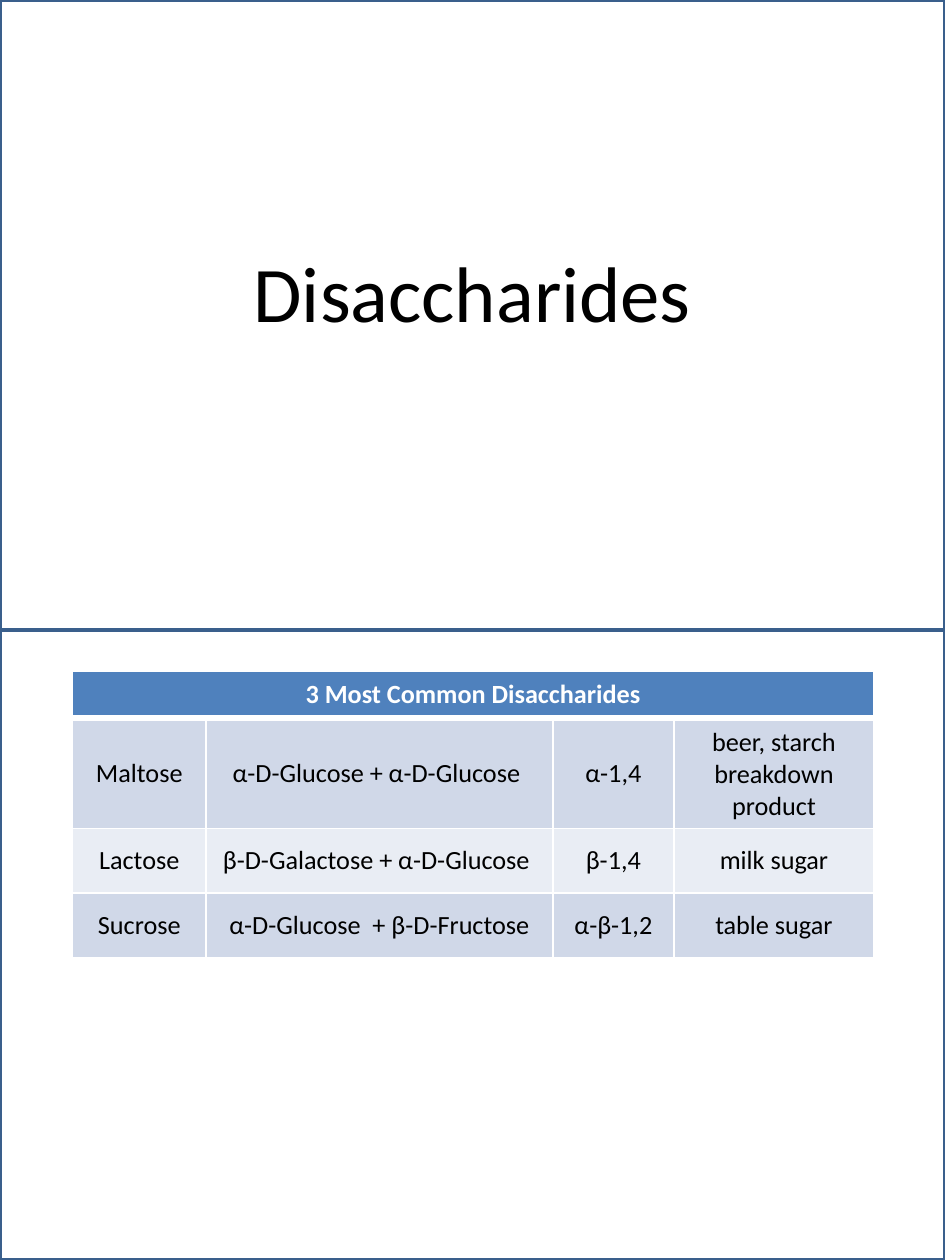
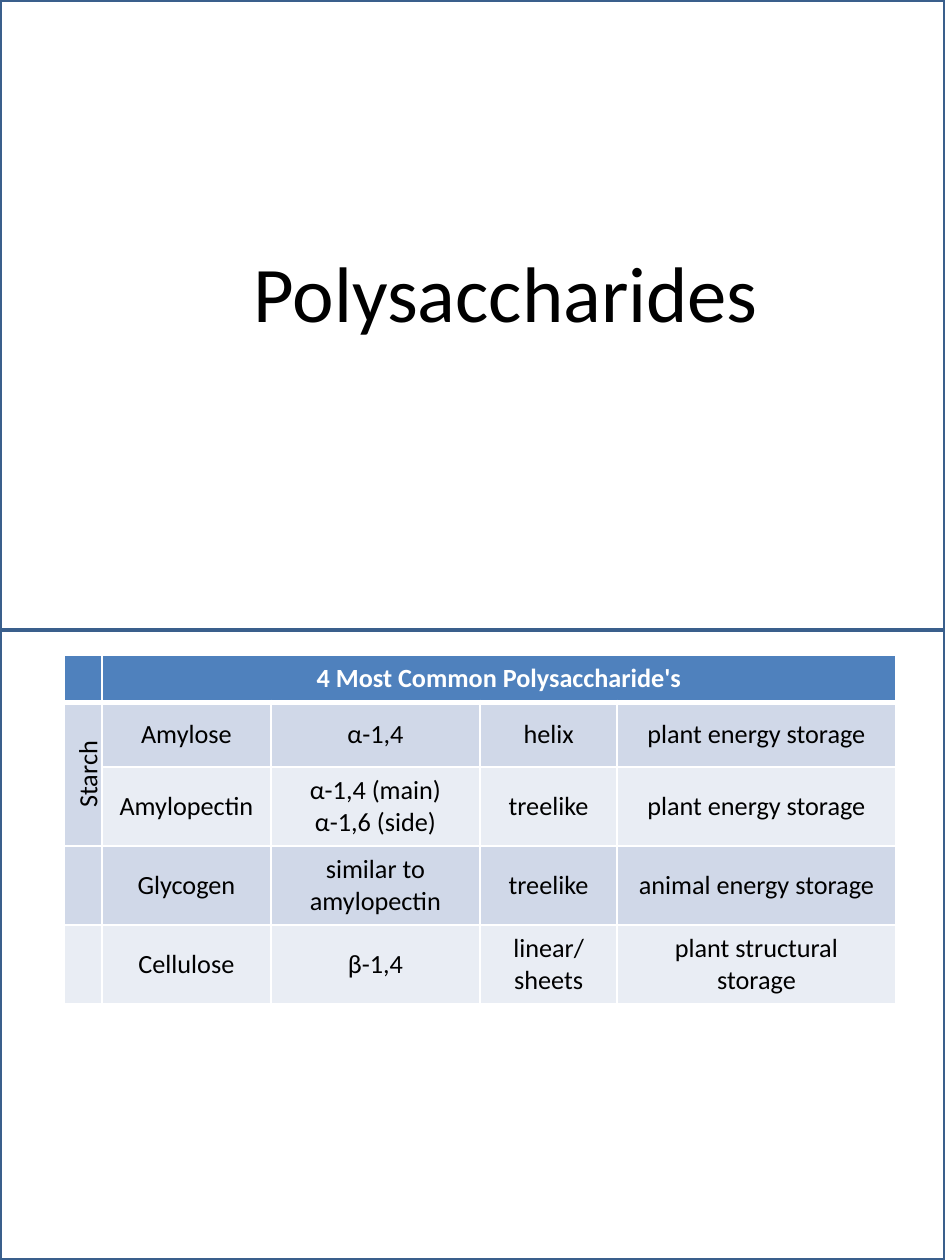
from lxml.etree import SubElement
from pptx import Presentation
from pptx.dml.color import RGBColor
from pptx.enum.dml import MSO_LINE
from pptx.enum.shapes import MSO_CONNECTOR, MSO_SHAPE
from pptx.enum.text import MSO_ANCHOR as Anchor, MSO_AUTO_SIZE as AutoSize, PP_ALIGN as Align
from pptx.oxml import parse_xml
from pptx.oxml.ns import nsdecls, qn
from pptx.util import Inches, Pt

# Shared style
FONT = "Calibri"
BLACK = RGBColor(0x00, 0x00, 0x00)
WHITE = RGBColor(0xFF, 0xFF, 0xFF)
FRAME_BLUE = RGBColor(0x3A, 0x5F, 0x8C)
DIVIDER_BLUE = RGBColor(0x4B, 0x7E, 0xBC)
HEADER_BLUE = RGBColor(0x4F, 0x81, 0xBD)
BANDS = (RGBColor(0xD0, 0xD8, 0xE8), RGBColor(0xE9, 0xED, 0xF4))

# Page grid: 60 columns by 80 rows, each 0.1 inch; a card is half a page
COLUMNS, ROWS = 60, 80
CARD_ROWS = ROWS / 2
HEADER_ROW, BODY_ROW = 2.9, 4.1


def grid(units):
    return Inches(units / 10)


class CardDeck:
    """Flash cards: the term in the upper half, its table in the lower half."""

    def __init__(self):
        self.presentation = Presentation()
        self.presentation.slide_width = grid(COLUMNS)
        self.presentation.slide_height = grid(ROWS)
        self.slide = None

    def new_slide(self):
        layout = self.presentation.slide_layouts.get_by_name("Title Only")
        self.slide = self.presentation.slides.add_slide(layout)
        self.divider()
        for card in range(2):
            self.frame(card * CARD_ROWS)

    def divider(self):
        middle = grid(CARD_ROWS)
        line = self.slide.shapes.add_connector(
            MSO_CONNECTOR.STRAIGHT, 0, middle, grid(COLUMNS), middle)
        line.line.color.rgb = DIVIDER_BLUE
        line.line.width = Pt(1)
        SubElement(line._element.spPr, qn("a:effectLst"))

    def frame(self, top):
        shape = self.slide.shapes.add_shape(
            MSO_SHAPE.RECTANGLE, 0, grid(top), grid(COLUMNS), grid(CARD_ROWS))
        shape.shadow.inherit = False
        shape.fill.background()
        shape.line.color.rgb = FRAME_BLUE
        shape.line.width = Pt(2)

    def title(self, text, width):
        title = self.slide.shapes.title
        title.left, title.top = grid(15.1), grid(15)
        title.width, title.height = grid(width), grid(7.1)
        frame = title.text_frame
        frame.text = text
        frame.word_wrap = False
        frame.auto_size = AutoSize.SHAPE_TO_FIT_TEXT
        frame.vertical_anchor = Anchor.TOP
        paragraph = frame.paragraphs[0]
        paragraph.alignment = Align.LEFT
        self.style_font(paragraph, 36, BLACK)

    def style_font(self, paragraph, size, color, bold=False):
        font = paragraph.font
        font.name, font.size, font.bold = FONT, Pt(size), bold
        font.color.rgb = color

    def table(self, left, top, widths, rows):
        heights = [HEADER_ROW] + [BODY_ROW] * (len(rows) - 1)
        table = self.slide.shapes.add_table(
            len(rows), len(widths), grid(left), grid(top),
            grid(sum(widths)), grid(sum(heights))).table
        for column, width in zip(table.columns, widths):
            column.width = grid(width)
        for row, height in zip(table.rows, heights):
            row.height = grid(height)
        for row_index, texts in enumerate(rows):
            for column_index, text in enumerate(texts):
                self.cell(table.cell(row_index, column_index), text, row_index)
        return table

    def cell(self, cell, text, row_index):
        is_header = row_index == 0
        cell.fill.solid()
        cell.fill.fore_color.rgb = HEADER_BLUE if is_header else BANDS[(row_index - 1) % 2]
        cell.vertical_anchor = Anchor.TOP if is_header else Anchor.MIDDLE
        cell.text_frame.text = text
        for paragraph in cell.text_frame.paragraphs:
            paragraph.alignment = Align.CENTER
            self.style_font(paragraph, 12, WHITE if is_header else BLACK, is_header)
            if not text:
                # Keeps an empty cell from stretching its row
                paragraph._p.get_or_add_endParaRPr().set("sz", "1200")
        self.borders(cell, top=3 if row_index == 1 else 1, bottom=3 if is_header else 1)

    def borders(self, cell, top, bottom):
        properties = cell._tc.get_or_add_tcPr()
        sides = (("lnL", 1), ("lnR", 1), ("lnT", top), ("lnB", bottom))
        for position, (side, points) in enumerate(sides):
            properties.insert(position, parse_xml(
                f'<a:{side} {nsdecls("a")} w="{Pt(points)}"><a:solidFill>'
                f'<a:srgbClr val="{WHITE}"/></a:solidFill></a:{side}>'))


def main():
    deck = CardDeck()

    # Disaccharides
    deck.new_slide()
    deck.title("Disaccharides", 30.1)
    table = deck.table(4.6, 42.6, (8.5, 22, 7.7, 12.7), (
        ("3 Most Common Disaccharides", "", "", ""),
        ("Maltose", "α-D-Glucose + α-D-Glucose ", "α-1,4", "beer, starch breakdown product"),
        ("Lactose", "β-D-Galactose + α-D-Glucose ", "β-1,4", "milk sugar"),
        ("Sucrose", "α-D-Glucose  + β-D-Fructose", "α-β-1,2", "table sugar"),
    ))
    table.cell(0, 0).merge(table.cell(0, 3))

    # Polysaccharides
    deck.new_slide()
    deck.title("Polysaccharides", 34.4)
    table = deck.table(4.1, 41.6, (2.3, 10.7, 13.3, 8.7, 17.7), (
        ("", "4 Most Common Polysaccharide's", "", "", ""),
        ("Starch", "Amylose", "α-1,4", "helix", "plant energy storage"),
        ("", "Amylopectin", "α-1,4 (main)\nα-1,6 (side)", "treelike", "plant energy storage"),
        ("", "Glycogen", "similar to amylopectin", "treelike", "animal energy storage"),
        ("", "Cellulose", "β-1,4", "linear/\nsheets", "plant structural storage"),
    ))
    table.cell(0, 1).merge(table.cell(0, 4))
    starch = table.cell(1, 0)
    starch.merge(table.cell(2, 0))
    starch._tc.get_or_add_tcPr().set("vert", "vert270")

    deck.presentation.save("out.pptx")


if __name__ == "__main__":
    main()
